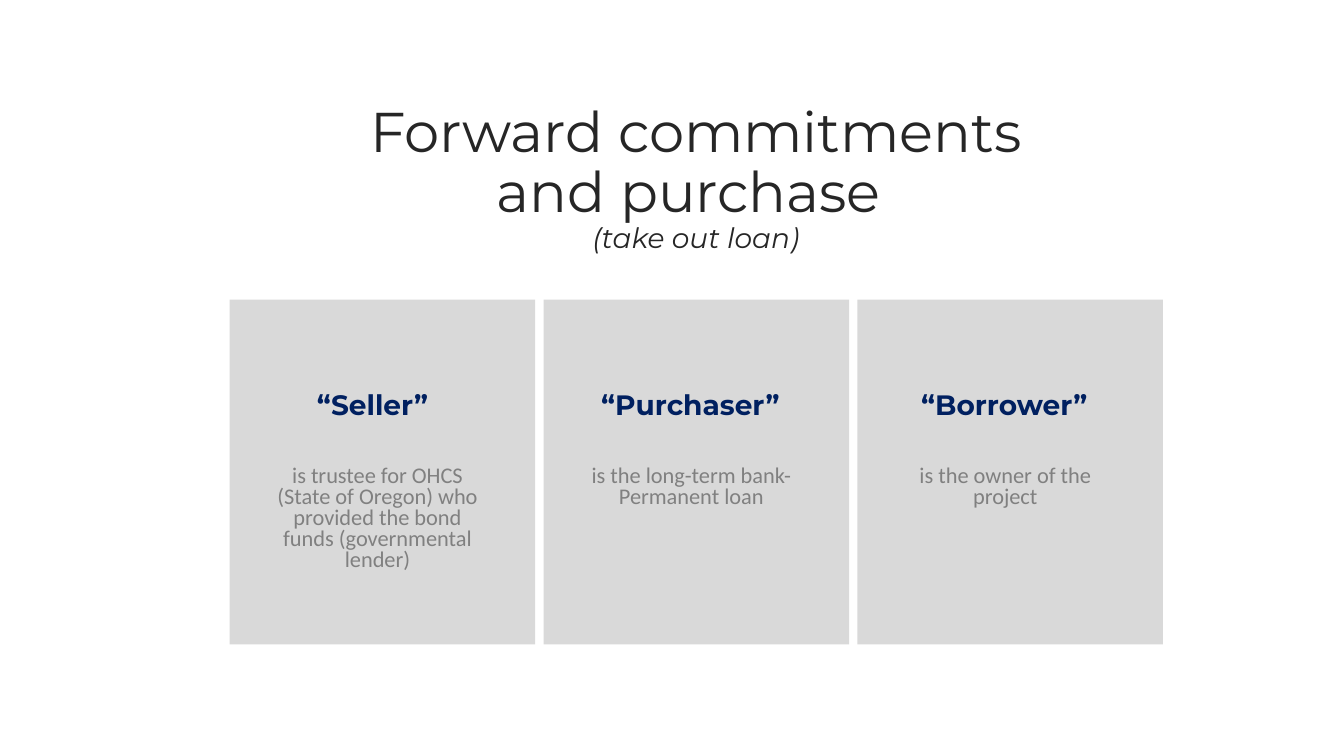
from dataclasses import dataclass

from pptx import Presentation
from pptx.dml.color import RGBColor
from pptx.enum import shapes, text
from pptx.util import Cm, Pt


@dataclass(frozen=True)
class Theme:
    card: str = "D9D9D9"
    navy: str = "002060"
    grey: str = "808080"
    ink: str = "262626"
    display: str = "Montserrat"
    body: str = "Calibri"
    title_size: int = 40
    heading_size: int = 20
    body_size: int = 16


THEME = Theme()

TITLE_FORMAT = {"name": THEME.display, "size": Pt(THEME.title_size)}
SUBTITLE_FORMAT = {"name": THEME.display, "size": Pt(THEME.heading_size), "italic": True}
HEADING_FORMAT = {"name": THEME.display, "size": Pt(THEME.heading_size), "bold": True}
BODY_FORMAT = {"name": THEME.body, "size": Pt(THEME.body_size)}

# Role, description, height of the description in cm
ROLES = [
    ("“Seller” ", "is trustee for OHCS (State of Oregon) who provided the bond "
     "funds (governmental lender)", 2.95),
    ("“Purchaser”", "is the long-term bank-Permanent loan", 1.35),
    ("“Borrower”", "is the owner of the project", 1.35),
]
CARDS_LEFT, CARD_PITCH = 5.79, 7.91


def add_text(s, box, paragraphs, color, spacing=None, fit=text.MSO_AUTO_SIZE.SHAPE_TO_FIT_TEXT):
    """Add a centred text box of (wording, font format) paragraphs."""
    sp = s.shapes.add_textbox(*map(Cm, box))
    tf = sp.text_frame
    tf.word_wrap = True
    tf.auto_size = fit
    for i, (wording, font_format) in enumerate(paragraphs):
        p = tf.add_paragraph() if i else tf.paragraphs[0]
        p.alignment = text.PP_ALIGN.CENTER
        p.line_spacing = spacing
        r = p.add_run()
        r.text = wording
        for attribute, value in font_format.items():
            setattr(r.font, attribute, value)
        r.font.color.rgb = RGBColor.from_string(color)


def add_card(s, left):
    sp = s.shapes.add_shape(shapes.MSO_SHAPE.RECTANGLE, Cm(left), Cm(7.55), Cm(7.7), Cm(8.69))
    sp.shadow.inherit = False
    sp.fill.solid()
    sp.fill.fore_color.rgb = RGBColor.from_string(THEME.card)
    sp.line.fill.background()


def add_role(s, left, heading, description, height):
    add_card(s, left)
    add_text(s, (left + 0.69, 9.63, 6.02, 1.12), [(heading, HEADING_FORMAT)], THEME.navy)
    add_text(s, (left + 0.79, 11.64, 5.87, height), [(description, BODY_FORMAT)],
             THEME.grey, Pt(15))


def main():
    prs = Presentation()
    prs.slide_width, prs.slide_height = Cm(33.87), Cm(19.05)
    s = prs.slides.add_slide(prs.slide_layouts[6])

    # Cards, one for each party to the loan
    for i, role in enumerate(ROLES):
        add_role(s, CARDS_LEFT + i * CARD_PITCH, *role)

    # Title and subtitle
    add_text(s, (7.67, 2.49, 19.74, 5.44),
             [("Forward commitments and purchase ", TITLE_FORMAT),
              ("(take out loan)", SUBTITLE_FORMAT)],
             THEME.ink, 0.9, text.MSO_AUTO_SIZE.NONE)

    prs.save("out.pptx")


if __name__ == "__main__":
    main()
